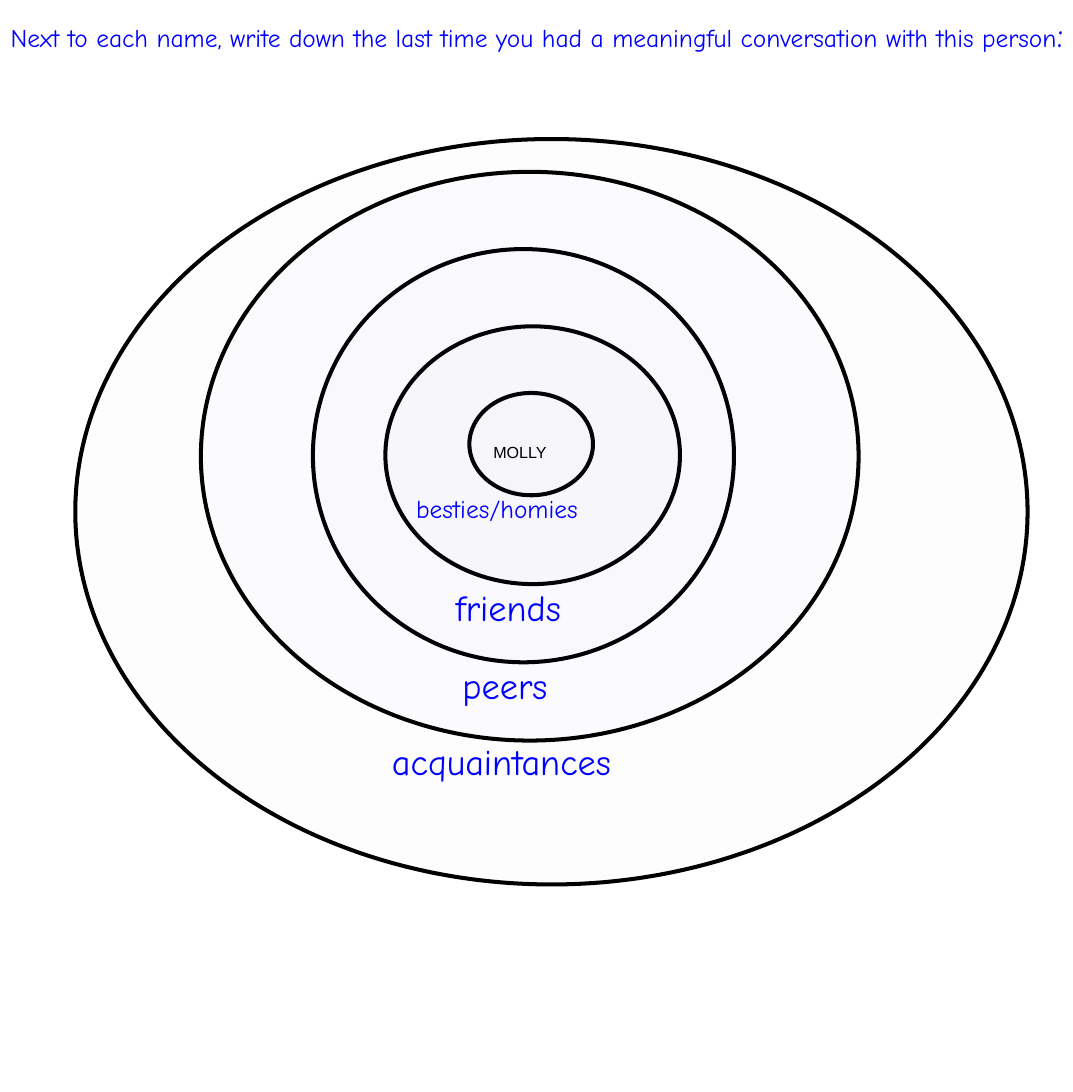
from dataclasses import dataclass

from lxml.etree import SubElement
from pptx import Presentation
from pptx.dml.color import RGBColor
from pptx.enum.shapes import MSO_SHAPE
from pptx.enum.text import MSO_ANCHOR, MSO_AUTO_SIZE, PP_ALIGN
from pptx.oxml.ns import qn
from pptx.util import Pt

EMU_PER_PX = 9144  # 100 px to the inch
TITLE_ONLY = 5


@dataclass(frozen=True)
class Theme:
    ink: RGBColor = RGBColor(0x00, 0x00, 0x00)
    accent: RGBColor = RGBColor(0x00, 0x00, 0xFF)
    tint: RGBColor = RGBColor(0x66, 0x66, 0xCC)
    tint_alpha: int = 1000  # 1 %, so nested rings add up
    outline: int = 3
    hand_font: str = "Comic Neue"
    plain_font: str = "Arial"
    small: int = 12
    medium: int = 19
    large: int = 27


class CircleSlide:
    def __init__(self, width, height, theme):
        self.theme = theme
        self.deck = Presentation()
        self.deck.slide_width, self.deck.slide_height = self.px(width, height)
        self.slide = self.deck.slides.add_slide(self.deck.slide_layouts[TITLE_ONLY])

    def px(self, *lengths):
        return [length * EMU_PER_PX for length in lengths]

    def style(self, run, size, font, color):
        run.font.size = Pt(size)
        run.font.name = font
        run.font.color.rgb = color

    def title(self, parts, box):
        """Fill the title placeholder with (text, size) parts on one line."""
        heading = self.slide.shapes.title
        heading.left, heading.top, heading.width, heading.height = self.px(*box)
        frame = heading.text_frame
        frame.word_wrap = True
        frame.auto_size = MSO_AUTO_SIZE.NONE
        frame.vertical_anchor = MSO_ANCHOR.TOP
        paragraph = frame.paragraphs[0]
        paragraph.alignment = PP_ALIGN.LEFT
        for text, size in parts:
            run = paragraph.add_run()
            run.text = text
            self.style(run, size, self.theme.hand_font, self.theme.accent)

    def ring(self, *box):
        ring = self.slide.shapes.add_shape(MSO_SHAPE.OVAL, *self.px(*box))
        ring.shadow.inherit = False
        ring.line.color.rgb = self.theme.ink
        ring.line.width = Pt(self.theme.outline)
        ring.fill.solid()
        ring.fill.fore_color.rgb = self.theme.tint
        tint = ring.fill._xPr.find(qn("a:solidFill"))[0]
        SubElement(tint, qn("a:alpha"), val=str(self.theme.tint_alpha))

    def label(self, text, box, size, font, color):
        label = self.slide.shapes.add_textbox(*self.px(*box))
        frame = label.text_frame
        frame.word_wrap = True
        frame.text = text
        self.style(frame.paragraphs[0].runs[0], size, font, color)

    def save(self):
        self.deck.save("out.pptx")


def main():
    theme = Theme()
    page = CircleSlide(1111, 1131, theme)

    # Instruction
    page.title(
        [
            ("Next to each name, write down the last time you had "
             "a meaningful conversation with this person", theme.medium),
            (":", theme.large),
        ],
        (1, 7, 1114, 88),
    )

    # Circles of closeness, from the centre outwards
    rings = [
        (486, 407, 128, 106),
        (399, 338, 305, 267),
        (324, 258, 436, 428),
        (208, 178, 681, 589),
        (78, 144, 986, 772),
    ]
    for ring in rings:
        page.ring(*ring)

    # Person in the centre
    page.label("MOLLY", (501, 453, 108, 30), theme.small, theme.plain_font, theme.ink)

    # Name of each circle
    groups = [
        ("friends", (462, 601, 231, 56), theme.large),
        ("peers", (469, 682, 192, 56), theme.large),
        ("acquaintances", (396, 761, 381, 56), theme.large),
        ("besties/homies", (421, 506, 303, 42), theme.medium),
    ]
    for group, box, size in groups:
        page.label(group, box, size, theme.hand_font, theme.accent)

    page.save()


if __name__ == "__main__":
    main()
